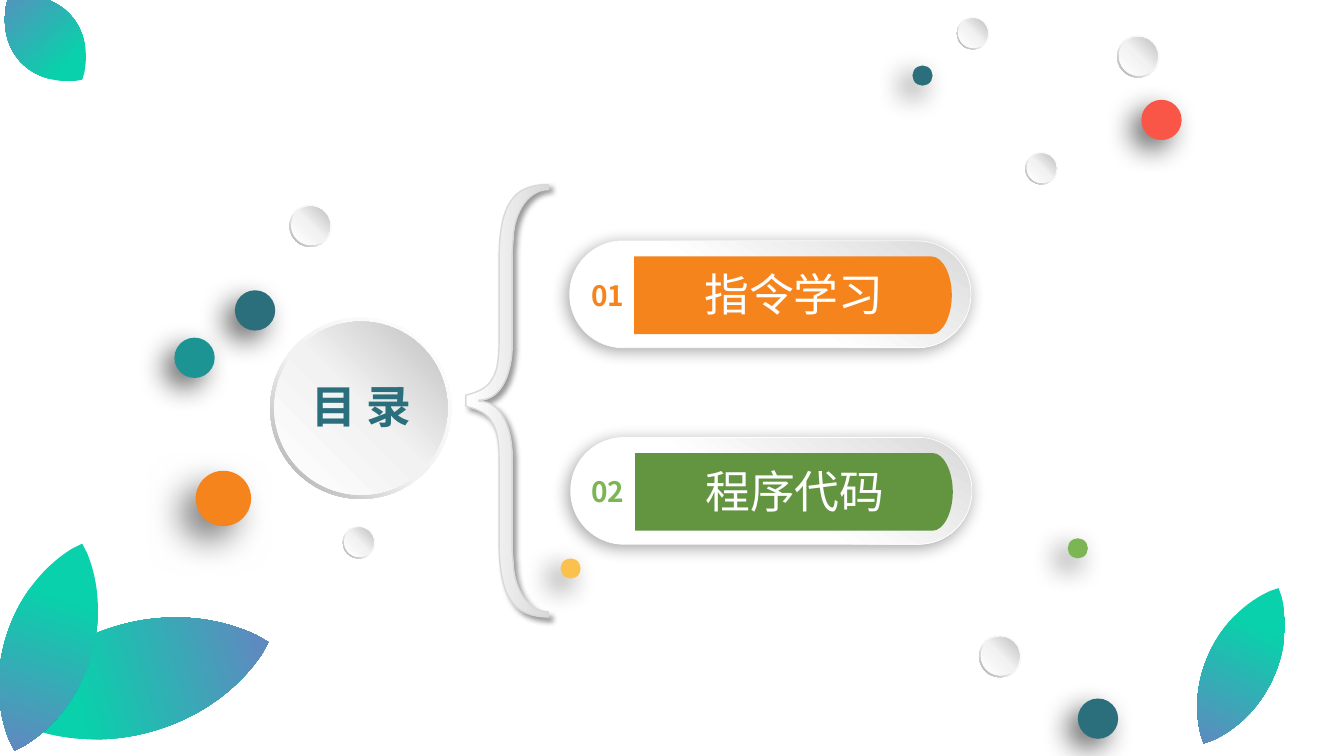
import pptx
import pptx.util
import pptx.dml.color
import pptx.enum.shapes
import pptx.enum.text
import pptx.oxml.ns
from lxml import etree
from pptx.util import Inches

SHAPE = pptx.enum.shapes.MSO_SHAPE
ALIGN = pptx.enum.text.PP_ALIGN
ANCHOR = pptx.enum.text.MSO_ANCHOR
qn = pptx.oxml.ns.qn

FONT = "Noto Sans CJK SC"
COLORS = {
    "white": "FFFFFF", "black": "000000", "pale": "F2F2F2", "light": "D9D9D9",
    "silver": "BFBFBF", "gray": "A6A6A6", "navy": "2B6F7D", "teal": "1C9494",
    "orange": "F5841C", "green": "639541", "lime": "7CB554", "red": "F95647",
    "yellow": "FAC14D", "mint": "09D1AB", "violet": "6E7DC3",
}
RIM = ([(0, "white"), (55, "pale"), (100, "gray")], 135)
FACE = ([(0, "white"), (51, "pale"), (100, "silver")], 315)
PILL = ([(45, "white"), (100, "light")], 300)
BRACE = ([(0, "white"), (100, "light")], 0)
LEAF = ([(0, "mint"), (31, "mint"), (100, "violet")], 90)


def rgb(name):
    return pptx.dml.color.RGBColor.from_string(COLORS[name])


# Styling
def add_color(parent, name):
    return etree.SubElement(parent, qn("a:srgbClr"), val=COLORS[name])


def paint(sp, fill, line=None, shadow=None):
    """fill: colour or (stops, angle); line: (from, to, width); shadow: (alpha, blur, distance, angle)."""
    sp.shadow.inherit = False
    if isinstance(fill, str):
        sp.fill.solid()
        sp.fill.fore_color.rgb = rgb(fill)
    else:
        stops, angle = fill
        sp.fill.gradient()
        grad = sp.element.spPr.find(qn("a:gradFill"))
        for child in list(grad):
            grad.remove(child)
        gs_lst = etree.SubElement(grad, qn("a:gsLst"))
        for pos, name in stops:
            add_color(etree.SubElement(gs_lst, qn("a:gs"), pos=str(pos * 1000)), name)
        etree.SubElement(grad, qn("a:lin"), ang=str(angle * 60000), scaled="0")
    if line:
        sp.line.width = pptx.util.Pt(line[2])
        sp.line.fill.gradient()
        for stop, name in zip(sp.line.fill.gradient_stops, line):
            stop.color.rgb = rgb(name)
    else:
        sp.line.fill.background()
    if shadow:
        alpha, blur, dist, angle = shadow
        outer = etree.SubElement(
            sp.element.spPr.find(qn("a:effectLst")), qn("a:outerShdw"),
            blurRad=str(pptx.util.Pt(blur)), dist=str(pptx.util.Pt(dist)),
            dir=str(angle * 60000), algn="ctr", rotWithShape="0")
        etree.SubElement(add_color(outer, "black"), qn("a:alpha"), val=str(alpha * 1000))


def write(sp, text, size, color, bold=False, wrap=True):
    tf = sp.text_frame
    tf.text = text
    tf.word_wrap = wrap
    tf.vertical_anchor = ANCHOR.TOP
    p = tf.paragraphs[0]
    p.alignment = ALIGN.CENTER
    r = p.runs[0]
    r.font.size, r.font.bold, r.font.name = pptx.util.Pt(size), bold, FONT
    r.font.color.rgb = rgb(color)
    etree.SubElement(r.font._element, qn("a:ea"), typeface=FONT)


# Outlines: nodes are (x, y, is_control); two controls in a row make a curve
def nodes(*segments):
    """Segments of two numbers are corners, of six numbers curves."""
    result = []
    for seg in segments:
        pairs = list(zip(seg[::2], seg[1::2]))
        result += [(x, y, True) for x, y in pairs[:-1]] + [(*pairs[-1], False)]
    return result


def mirror(path_nodes, axis):
    """Reversed nodes, reflected about the horizontal line y = axis."""
    return [(x, 2 * axis - y, ctrl) for x, y, ctrl in reversed(path_nodes)]


def add_outline(shapes, path_nodes, left=0, top=0):
    pts = [(Inches(left + x), Inches(top + y)) for x, y, _ in path_nodes]
    fb = shapes.build_freeform(*pts[0], scale=1.0)
    fb.add_line_segments(pts[1:], close=True)
    sp = fb.convert_to_shape()
    # Join each pair of control points and the node after it into one curve
    lines = list(sp.element.iter(qn("a:lnTo")))
    controls = [i for i, node in enumerate(path_nodes[1:]) if node[2]]
    for i in controls[::2]:
        curve = etree.Element(qn("a:cubicBezTo"))
        lines[i].addprevious(curve)
        for ln in lines[i:i + 3]:
            curve.append(ln[0])
            ln.getparent().remove(ln)
    return sp


# Kinds of element
def add_preset(shapes, kind, x, y, w, h, adj=None):
    sp = shapes.add_shape(kind, Inches(x), Inches(y), Inches(w), Inches(h))
    if adj is not None:
        sp.adjustments[0] = adj
    return sp


def add_label(shapes, x, y, w, h, *text_format, **options):
    box = shapes.add_textbox(Inches(x), Inches(y), Inches(w), Inches(h))
    write(box, *text_format, **options)


def add_button(s, x, y, d):
    """Embossed gray disc: a rim with a face inside."""
    shapes = s.shapes.add_group_shape().shapes
    face = 0.955 * d if d > 1 else 0.91 * d
    gap = (d - face) / 2
    paint(add_preset(shapes, SHAPE.DONUT, x, y, d, d, 0.049), RIM)
    paint(add_preset(shapes, SHAPE.OVAL, x + gap, y + gap, face, face), FACE)


def add_dot(s, x, y, d, color, shadow=(60, 20, 10, 135)):
    paint(add_preset(s.shapes, SHAPE.OVAL, x, y, d, d), color, shadow=shadow)


def add_leaf(s, x, y, w, h, rotation):
    half = nodes((0.5 * w, 0), (0.41 * w, 0.035 * h),
                 (0.156 * w, 0.155 * h, 0, 0.317 * h, 0, 0.5 * h))
    left = half + mirror(half, h / 2)[1:]
    right = [(w - px, py, ctrl) for px, py, ctrl in reversed(left)]
    sp = add_outline(s.shapes, left + right[1:-1], x, y)
    sp.rotation = rotation
    paint(sp, LEAF)


def add_brace(s):
    inner = nodes((5.44, 1.83), (5.44, 1.88), (5.25, 1.88, 5.1, 2.09, 5.09, 2.36),
                  (5.08, 2.49), (5.08, 3.42), (5.08, 3.67, 4.99, 3.97, 4.75, 3.97))
    outer = nodes((4.62, 3.92), (4.75, 3.89, 4.84, 3.84, 4.88, 3.76),
                  (4.93, 3.69, 4.95, 3.56, 4.95, 3.38), (4.95, 2.57),
                  (4.95, 2.29, 4.99, 2.1, 5.07, 1.99), (5.14, 1.88, 5.27, 1.83, 5.44, 1.83))
    axis = 3.975
    ring = inner + mirror(inner, axis) + mirror(outer, axis)[1:] + outer
    sp = add_outline(s.shapes, ring[:-1] + [inner[0]])
    paint(sp, BRACE, ("light", "white", 1), (40, 4, 3, 45))


def add_entry(s, x, y, number, label, bar_color, number_color):
    shapes = s.shapes.add_group_shape().shapes
    pill = add_preset(shapes, SHAPE.ROUNDED_RECTANGLE, x, y, 3.98, 1.06, 0.5)
    paint(pill, PILL, ("white", "light", 0.5), (34, 12, 3, 135))
    top = nodes((0, 0), (2.95, 0), (3.06, 0, 3.15, 0.18, 3.15, 0.385))
    bar = add_outline(shapes, top + mirror(top, 0.385)[1:], x + 0.64, y + 0.155)
    paint(bar, bar_color)
    add_label(shapes, 5.76, y + 0.32, 0.54, 0.44, number, 20, number_color,
              bold=True, wrap=False)
    add_label(shapes, x + 1.12, y + 0.21, 2.21, 0.64, label, 32, "white")


def add_title(s, text):
    title = s.shapes.title
    title.left, title.top, title.width, title.height = map(Inches, (2.8, 3.76, 1.57, 0.54))
    write(title, text, 32, "navy", bold=True)
    tf = title.text_frame
    tf.margin_left = tf.margin_right = tf.margin_top = tf.margin_bottom = 0
    title.element.getparent().append(title.element)  # bring above the disc


def main():
    prs = pptx.Presentation()
    prs.slide_width, prs.slide_height = Inches(13.33), Inches(7.5)
    s = prs.slides.add_slide(prs.slide_layouts[5])

    # Contents disc, brace and entries
    add_button(s, 2.68, 3.15, 1.8)
    add_title(s, "目 录")
    add_brace(s)
    add_entry(s, 5.65, 2.39, "01", "指令学习", "orange", "orange")
    add_entry(s, 5.66, 4.34, "02", "程序代码", "green", "lime")

    # Corner leaves
    for leaf in ((0.79, 5.36, 1.1, 2.74, 254.8), (0.05, 5.34, 0.86, 2.16, 18.1),
                 (11.97, 5.75, 0.68, 1.71, 25.7), (0.11, -0.17, 0.68, 1.1, 138.3)):
        add_leaf(s, *leaf)

    # Scattered dots and gray buttons
    for dot in ((11.32, 0.99, 0.4, "red"), (9.05, 0.65, 0.2, "navy"),
                (2.33, 2.88, 0.4, "navy"), (5.56, 5.54, 0.2, "yellow"),
                (1.94, 4.67, 0.55, "orange", (50, 25, 15, 135)),
                (10.69, 6.93, 0.4, "navy"), (1.73, 3.35, 0.4, "teal"),
                (10.59, 5.34, 0.2, "lime")):
        add_dot(s, *dot)
    for button in ((9.49, 0.17, 0.32), (11.08, 0.35, 0.42), (3.4, 5.22, 0.32),
                   (10.17, 1.51, 0.32), (9.71, 6.3, 0.42), (2.87, 2.03, 0.42)):
        add_button(s, *button)

    prs.save("out.pptx")


if __name__ == "__main__":
    main()
